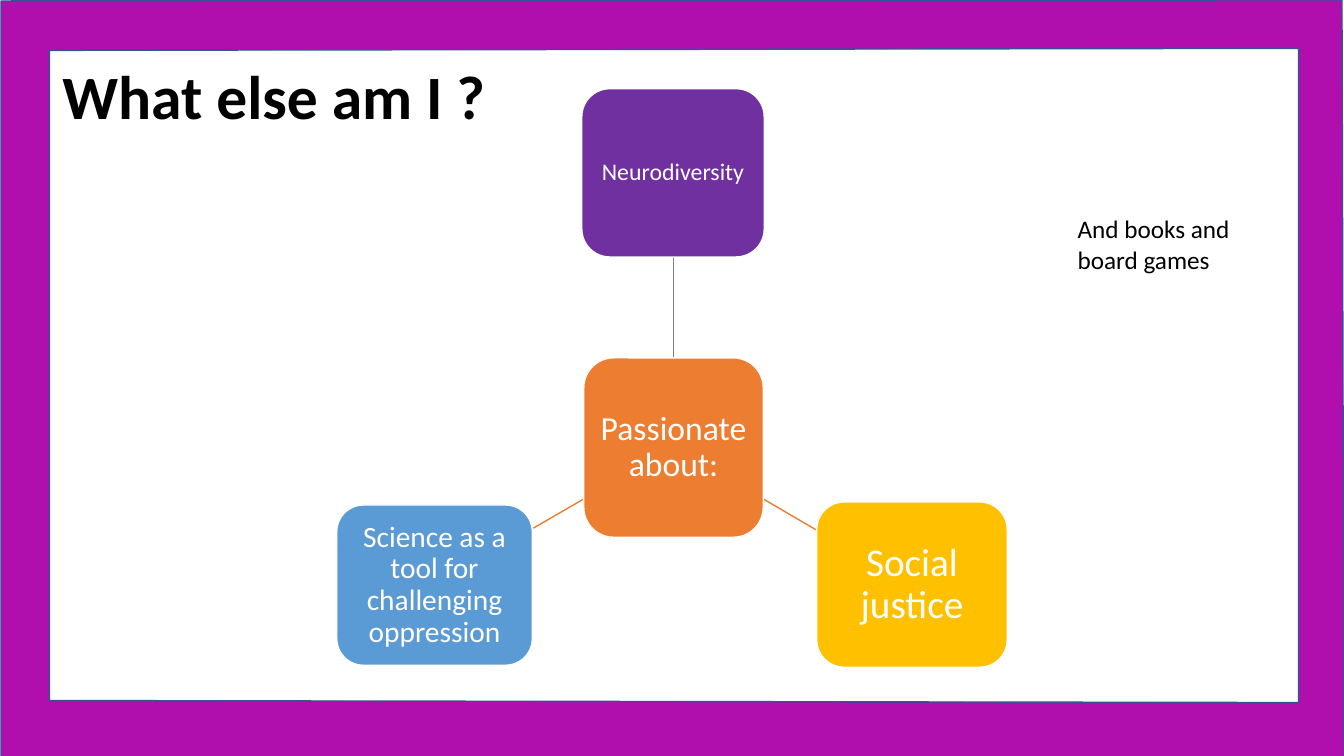
import pptx
import pptx.util
import pptx.dml.color
import pptx.enum.shapes
import pptx.enum.text
import lxml.etree

PX = 9144
THEME = {
    "font": "Calibri",
    "frame": "B10FAD", "frame_line": "325491",
    "black": "000000", "white": "FFFFFF", "gray": "7F7F7F",
    "orange": "ED7D31", "purple": "7030A0", "gold": "FFC000", "blue": "5B9BD5",
    "title": 44, "note": 18, "hub": 24, "top": 17, "right": 28, "left": 21,
}
ANCHOR = pptx.enum.text.MSO_ANCHOR
ALIGN = pptx.enum.text.PP_ALIGN


def rgb(name):
    return pptx.dml.color.RGBColor.from_string(THEME[name])


def write(s, text, size, color, anchor, align, spacing, bold=False):
    tf = s.text_frame
    tf.word_wrap = True
    tf.vertical_anchor = anchor
    p = tf.paragraphs[0]
    p.alignment = align
    p.line_spacing = spacing
    r = p.add_run()
    r.text = text
    r.font.name = THEME["font"]
    r.font.size = pptx.util.Pt(THEME[size])
    r.font.bold = bold
    r.font.color.rgb = rgb(color)


prs = pptx.Presentation()
prs.slide_width = 1333 * PX
prs.slide_height = 750 * PX
slide = prs.slides.add_slide(prs.slide_layouts[6])

outer = [(1, 1), (1331, 0), (1333, 754), (1, 754)]
inner = [(49, 50), (49, 695), (1288, 697), (1288, 48)]
builder = slide.shapes.build_freeform(*outer[0], scale=PX)
builder.add_line_segments(outer[1:], close=True)
builder.move_to(*inner[0])
builder.add_line_segments(inner[1:], close=True)
frame = builder.convert_to_shape()
frame.shadow.inherit = False
frame.fill.solid()
frame.fill.fore_color.rgb = rgb("frame")
frame.line.color.rgb = rgb("frame_line")
frame.line.width = pptx.util.Pt(1)

texts = [
    ("What else am I ?", (52, 53, 466, 84), "title", ANCHOR.BOTTOM, 0.9, True),
    ("And books and board games", (1059, 207, 176, 71), "note", ANCHOR.TOP, 1.0, False),
]
for text, box, size, anchor, spacing, bold in texts:
    s = slide.shapes.add_textbox(*[v * PX for v in box])
    write(s, text, size, "black", anchor, ALIGN.LEFT, spacing, bold)

spokes = [
    ((668, 355, 668, 254), "gray", 0.5),
    ((757, 495, 810, 526), "orange", 1),
    ((579, 495, 529, 524), "orange", 1),
]
for ends, color, width in spokes:
    c = slide.shapes.add_connector(
        pptx.enum.shapes.MSO_CONNECTOR.STRAIGHT, *[v * PX for v in ends])
    c.line.color.rgb = rgb(color)
    c.line.width = pptx.util.Pt(width)
    lxml.etree.SubElement(c._element.spPr, pptx.oxml.ns.qn("a:effectLst"))

nodes = [
    ("Passionate about:", (579, 355, 178, 178), "orange", "hub", 7),
    ("Neurodiversity", (577, 88, 181, 167), "purple", "top", 5),
    ("Social justice", (810, 498, 189, 164), "gold", "right", 8),
    ("Science as a tool for challenging oppression", (334, 501, 194, 159), "blue", "left", 6),
]
for text, box, color, size, inset in nodes:
    s = slide.shapes.add_shape(
        pptx.enum.shapes.MSO_SHAPE.ROUNDED_RECTANGLE, *[v * PX for v in box])
    s.shadow.inherit = False
    s.fill.solid()
    s.fill.fore_color.rgb = rgb(color)
    s.line.color.rgb = rgb("white")
    s.line.width = pptx.util.Pt(1)
    tf = s.text_frame
    tf.margin_left = tf.margin_right = tf.margin_top = tf.margin_bottom = inset * PX
    write(s, text, size, "white", ANCHOR.MIDDLE, ALIGN.CENTER, 0.9)

prs.save("out.pptx")
